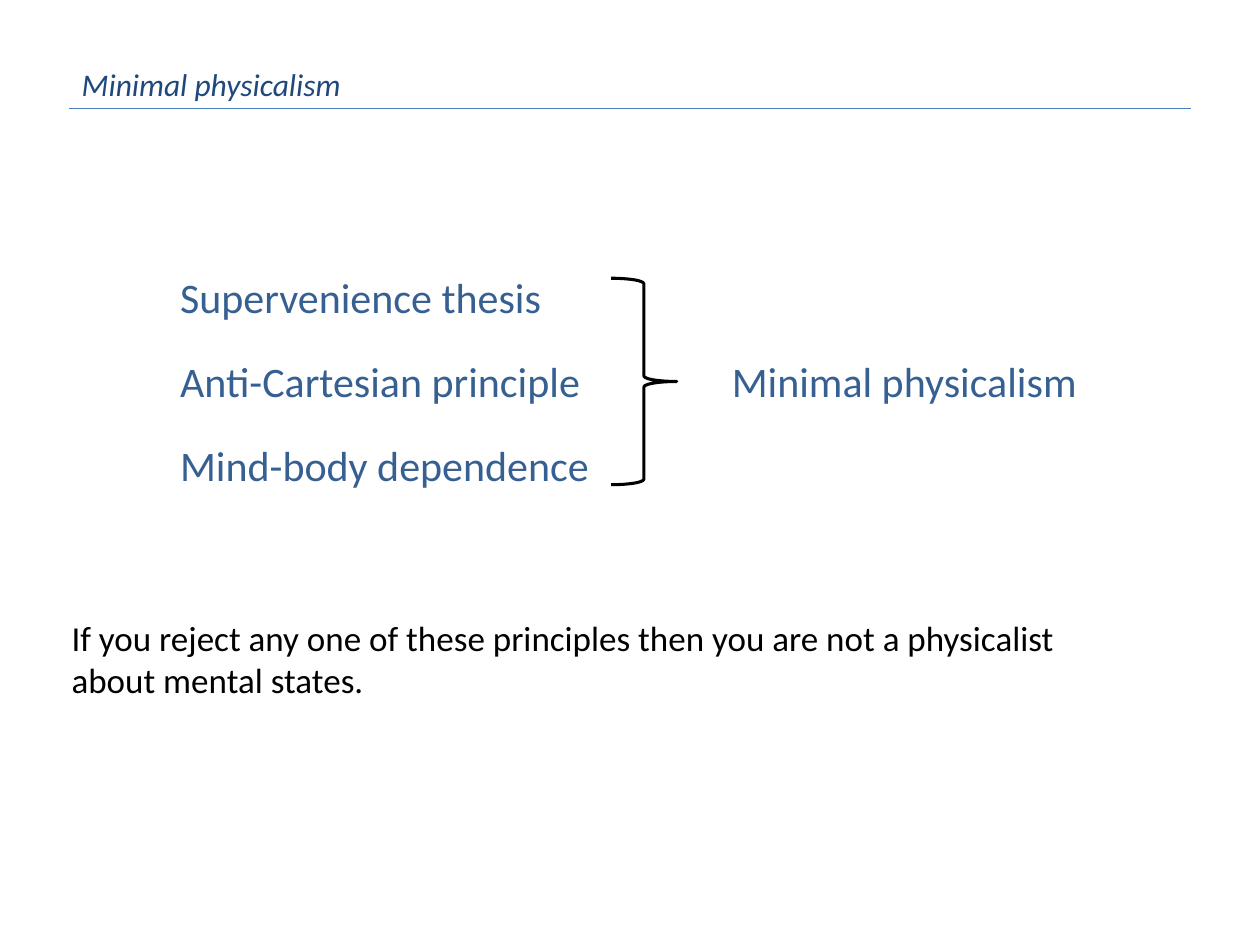
import pptx
import pptx.dml.color
import pptx.enum.shapes
import pptx.enum.text
import pptx.oxml.ns
import pptx.util
from lxml import etree

Pt = pptx.util.Pt

COLORS = {
    "title": "1F497D",
    "rule": "4B7EBC",
    "principle": "376092",
    "body": "000000",
    "brace": "000000",
}
FONT = "Calibri"

TITLE = "Minimal physicalism"
PRINCIPLES = [
    ("Supervenience thesis", 223),
    ("Anti-Cartesian principle", 245.5),
    ("Mind-body dependence", 250.5),
]
CONCLUSION = "Minimal physicalism"
REMARK = (
    "If you reject any one of these principles then you are not "
    "a physicalist about mental states."
)

PRINCIPLE_LEFT, PRINCIPLE_TOP = 95.8, 151.7
PRINCIPLE_STEP, PRINCIPLE_HEIGHT = 48, 36


def rgb(name):
    return pptx.dml.color.RGBColor.from_string(COLORS[name])


def add_text(slide, text, box, size, color, wrap=False, italic=False):
    shape = slide.shapes.add_textbox(*(Pt(length) for length in box))
    frame = shape.text_frame
    frame.text = text
    frame.word_wrap = wrap
    frame.auto_size = pptx.enum.text.MSO_AUTO_SIZE.SHAPE_TO_FIT_TEXT
    font = frame.paragraphs[0].runs[0].font
    font.name = FONT
    font.size = Pt(size)
    font.italic = italic
    font.color.rgb = rgb(color)


def add_rule(slide, left, right, top):
    rule = slide.shapes.add_connector(
        pptx.enum.shapes.MSO_CONNECTOR.STRAIGHT,
        Pt(left), Pt(top), Pt(right), Pt(top),
    )
    rule.line.color.rgb = rgb("rule")
    rule.line.width = Pt(0.75)
    etree.SubElement(rule._element.spPr, pptx.oxml.ns.qn("a:effectLst"))


def add_brace(slide, box):
    brace = slide.shapes.add_shape(
        pptx.enum.shapes.MSO_SHAPE.RIGHT_BRACE, *(Pt(length) for length in box)
    )
    brace.shadow.inherit = False
    brace.fill.background()
    brace.line.color.rgb = rgb("brace")
    brace.line.width = Pt(1.75)


def main():
    presentation = pptx.Presentation()
    presentation.slide_width = Pt(720)
    presentation.slide_height = Pt(540)
    slide = presentation.slides.add_slide(presentation.slide_layouts[6])

    add_text(slide, TITLE, (39.6, 33.8, 164, 29), 18, "title", italic=True)
    add_rule(slide, 39.6, 680.4, 61.9)
    add_text(slide, REMARK, (33.8, 348.5, 602, 55.5), 20, "body", wrap=True)

    for index, (principle, width) in enumerate(PRINCIPLES):
        top = PRINCIPLE_TOP + index * PRINCIPLE_STEP
        box = (PRINCIPLE_LEFT, top, width, PRINCIPLE_HEIGHT)
        add_text(slide, principle, box, 24, "principle")

    add_brace(slide, (349.2, 159, 37.5, 118))
    conclusion_top = PRINCIPLE_TOP + PRINCIPLE_STEP
    conclusion_box = (411.1, conclusion_top, 213, PRINCIPLE_HEIGHT)
    add_text(slide, CONCLUSION, conclusion_box, 24, "principle")

    presentation.save("out.pptx")


if __name__ == "__main__":
    main()
